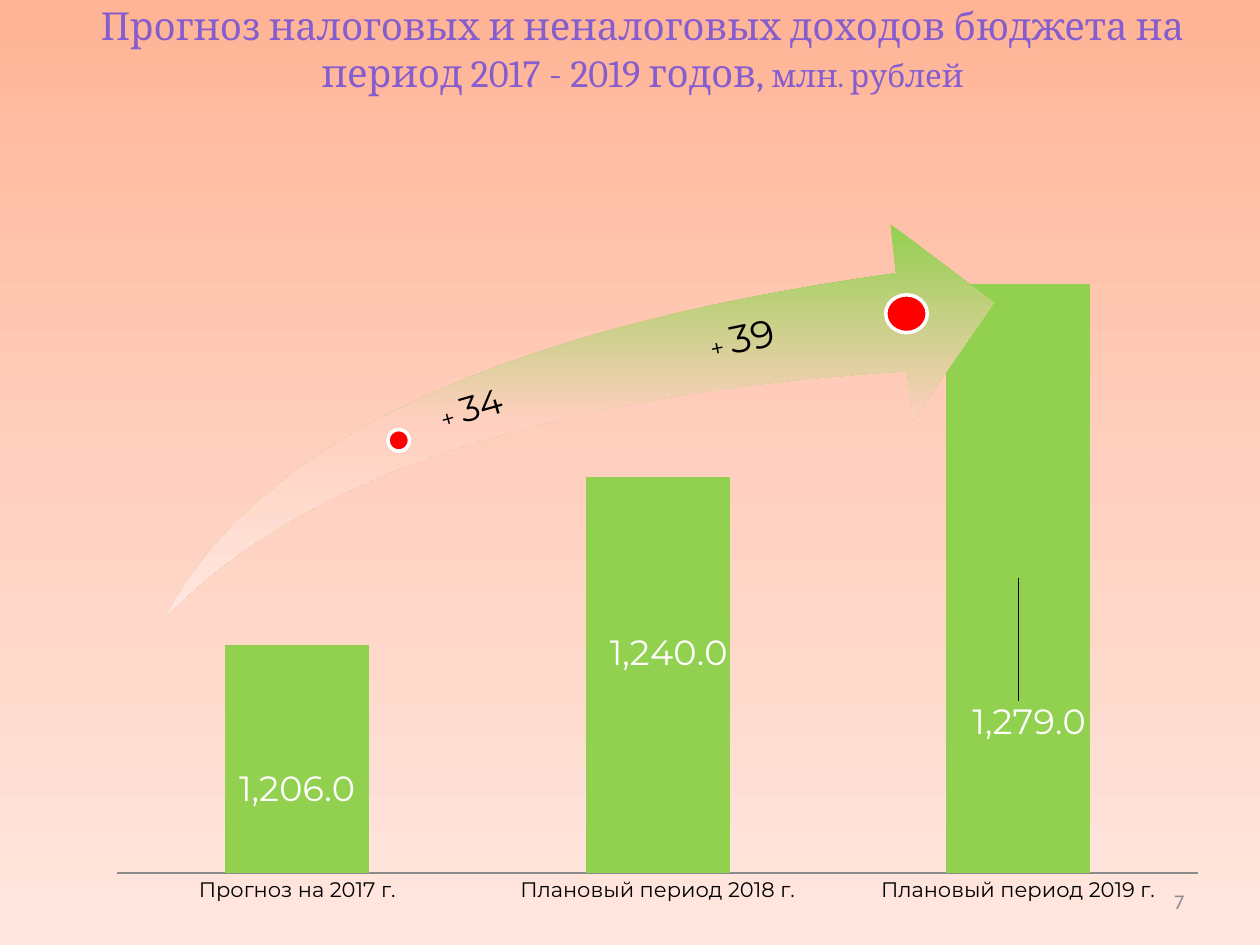
from copy import deepcopy
from dataclasses import dataclass

from lxml import etree
from pptx import Presentation
from pptx.chart.data import CategoryChartData
from pptx.dml.color import RGBColor as RGB
from pptx.enum.chart import XL_CHART_TYPE as CT, XL_LABEL_POSITION as LP, XL_TICK_MARK as TM
from pptx.enum.shapes import MSO_SHAPE as SH
from pptx.enum.text import MSO_ANCHOR as VA, MSO_AUTO_SIZE as AS, PP_ALIGN as AL
from pptx.oxml import parse_xml
from pptx.oxml.ns import nsdecls, qn
from pptx.util import Pt


@dataclass(frozen=True)
class Theme:
    green: RGB = RGB(0x92, 0xD0, 0x50)
    peach: RGB = RGB(0xFF, 0xB4, 0x96)
    blush: RGB = RGB(0xFF, 0xD0, 0xBF)
    pale: RGB = RGB(0xFF, 0xE7, 0xE0)
    purple: RGB = RGB(0x86, 0x5D, 0xCF)
    red: RGB = RGB(0xFF, 0, 0)
    white: RGB = RGB(0xFF, 0xFF, 0xFF)
    black: RGB = RGB(0, 0, 0)
    grey: RGB = RGB(0x8C, 0x8C, 0x8C)
    head_font: str = "Cambria"
    body_font: str = "Montserrat"
    number_font: str = "Calibri"
    title: int = 22
    unit: int = 18
    value: int = 20
    sign: int = 14
    small: int = 12


T = Theme()


def write_runs(p, parts, font, color):
    for text, size in parts:
        r = p.add_run()
        r.text = text
        r.font.name = font
        r.font.size = Pt(size)
        r.font.color.rgb = color


def fade_down(fill, *colors):
    fill.gradient()
    fill.gradient_angle = 270
    first, last = fill.gradient_stops
    first.position, last.position = 0, 1
    stops = fill._fill._gradFill.gsLst
    stops.insert(1, deepcopy(stops[0]))
    for i, (stop, color) in enumerate(zip(fill.gradient_stops, colors)):
        stop.color.rgb = color
        stop.position = i / 2


prs = Presentation()
prs.slide_width, prs.slide_height = Pt(720), Pt(540)
s = prs.slides.add_slide(prs.slide_layouts[5])
fade_down(s.background.fill, T.peach, T.blush, T.pale)

title = s.shapes.title
title.left, title.top, title.width, title.height = Pt(14.4), Pt(0), Pt(705.6), Pt(55.44)
tf = title.text_frame
tf.auto_size = AS.NONE
tf.vertical_anchor = VA.MIDDLE
p = tf.paragraphs[0]
p.alignment = AL.CENTER
write_runs(p, [("Прогноз налоговых и неналоговых доходов бюджета на период 2017 - 2019 годов, ", T.title),
               ("млн. рублей", T.unit)], T.head_font, T.purple)

data = CategoryChartData(number_format="#,##0.0")
data.categories = ["Прогноз на 2017 г.", "Плановый период 2018 г.", "Плановый период 2019 г."]
data.add_series("Series 1", [1206, 1240, 1279])
chart = s.shapes.add_chart(CT.COLUMN_CLUSTERED, Pt(54), Pt(94.32), Pt(643.68), Pt(430.56), data).chart
chart.has_legend = False
chart.has_title = False
chart.font.name = T.body_font
chart.font.size = Pt(T.small)
chart.font.color.rgb = T.black

cat_axis, val_axis = chart.category_axis, chart.value_axis
cat_axis.major_tick_mark = TM.NONE
cat_axis.format.line.color.rgb = T.grey
cat_axis.format.line.width = Pt(1)
val_axis.visible = False
val_axis.has_major_gridlines = False
val_axis.minimum_scale, val_axis.maximum_scale = 1160, 1300

plot = chart.plots[0]
plot.gap_width = 150
plot.vary_by_categories = False
series = plot.series[0]
series.format.fill.solid()
series.format.fill.fore_color.rgb = T.green

plot_area = chart._chartSpace.chart.plotArea
for old in plot_area.findall(qn("c:layout")):
    plot_area.remove(old)
plot_area.insert(0, parse_xml(
    f'<c:layout {nsdecls("c")}><c:manualLayout><c:layoutTarget val="inner"/>'
    '<c:xMode val="edge"/><c:yMode val="edge"/><c:x val="0.02"/><c:y val="0.02"/>'
    '<c:w val="0.96"/><c:h val="0.92"/></c:manualLayout></c:layout>'))

labels = series.data_labels
labels.show_value = True
labels.number_format = "#,##0.0"
labels.number_format_is_linked = False
labels.position = LP.CENTER
labels.font.size = Pt(T.value)
labels.font.color.rgb = T.white
for i, (dx, dy) in enumerate([(0, 0.04), (0.01, -0.03), (0.01, 0.19)]):
    label = series.points[i].data_label
    label.font.name = T.body_font
    label.font.size = Pt(T.value)
    label.font.color.rgb = T.white
    label.position = LP.CENTER
    idx = labels._element.findall(qn("c:dLbl"))[i].find(qn("c:idx"))
    idx.addnext(parse_xml(f'<c:numFmt {nsdecls("c")} formatCode="#,##0.0" sourceLinked="0"/>'))
    layout = etree.Element(qn("c:layout"))
    manual = etree.SubElement(layout, qn("c:manualLayout"))
    etree.SubElement(manual, qn("c:x")).set("val", str(dx))
    etree.SubElement(manual, qn("c:y")).set("val", str(dy))
    idx.addnext(layout)

growth = s.shapes.add_group_shape().shapes
arrow = growth.add_shape(SH.SWOOSH_ARROW, Pt(95.04), Pt(128.16), Pt(473.04), Pt(223.92))
arrow.adjustments[0] = arrow.adjustments[1] = 0.25
arrow.shadow.inherit = False
arrow.line.fill.background()
fade_down(arrow.fill, T.green, T.blush, T.pale)

steps = [
    ((221.76, 245.52, 12.24, 12.24), (243.36, 217.44, 92.16, 18.72), 344, 6.48, "34", T.value),
    ((506.16, 168.48, 23.76, 21.6), (393.12, 180, 83.52, 20.88), 348.3, 11.52, "39", T.title),
]
for dot_box, text_box, angle, inset, gain, size in steps:
    dot = growth.add_shape(SH.OVAL, *map(Pt, dot_box))
    dot.shadow.inherit = False
    dot.fill.solid()
    dot.fill.fore_color.rgb = T.red
    dot.line.color.rgb = T.white
    dot.line.width = Pt(2)

    tb = growth.add_textbox(*map(Pt, text_box))
    tb.rotation = angle
    tf = tb.text_frame
    tf.word_wrap = True
    tf.margin_left = Pt(inset)
    tf.margin_top = tf.margin_right = tf.margin_bottom = Pt(0)
    p = tf.paragraphs[0]
    p.line_spacing = 0.9
    write_runs(p, [("+ ", T.sign), (gain, size)], T.body_font, T.black)

tb = s.shapes.add_textbox(Pt(516.24), Pt(500.4), Pt(167.76), Pt(28.8))
tf = tb.text_frame
tf.word_wrap = True
tf.vertical_anchor = VA.MIDDLE
p = tf.paragraphs[0]
p.alignment = AL.RIGHT
write_runs(p, [("7", T.small)], T.number_font, T.grey)

prs.save("out.pptx")
